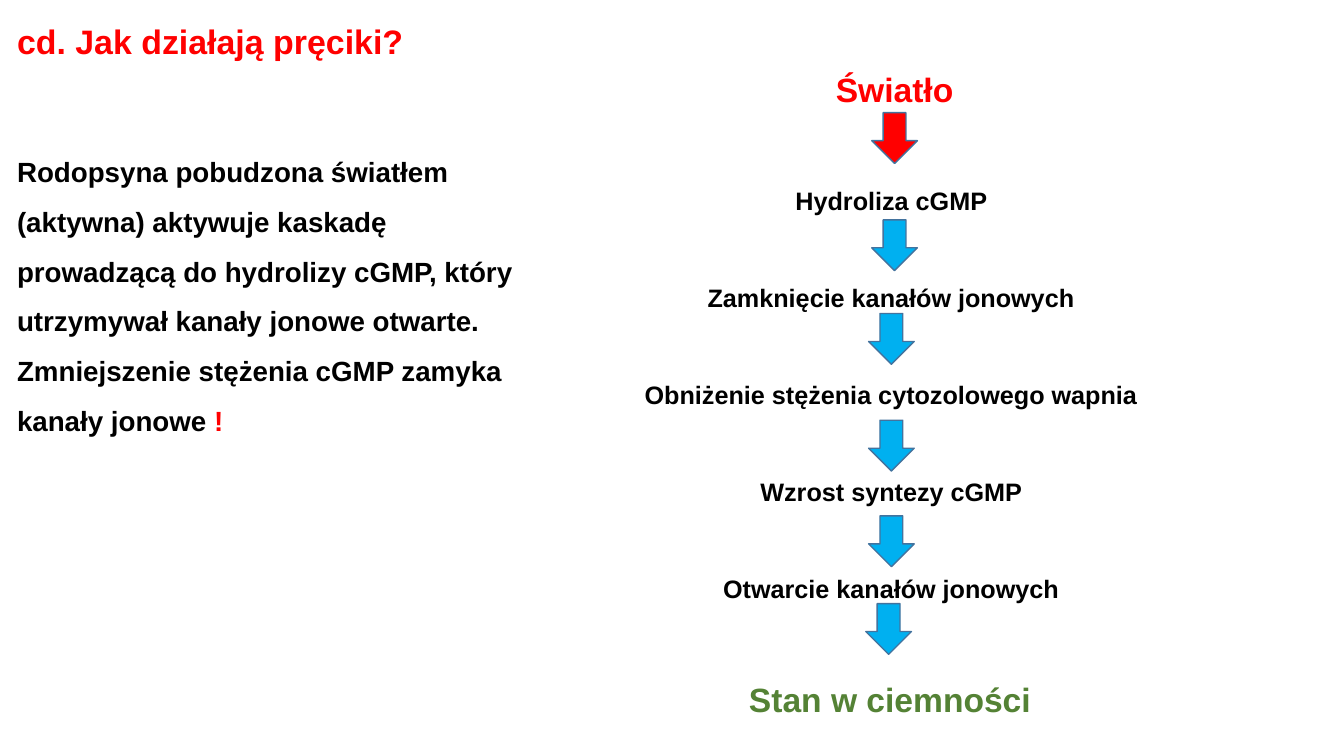
from dataclasses import dataclass

from pptx import Presentation
from pptx.dml.color import RGBColor
from pptx.enum.shapes import MSO_SHAPE as Shape
from pptx.enum.text import MSO_ANCHOR as Anchor, PP_ALIGN as Align
from pptx.slide import Slide
from pptx.text.text import TextFrame, _Paragraph as Paragraph
from pptx.util import Cm, Pt


@dataclass(frozen=True)
class Theme:
    font: str = "Arial"
    red: str = "FF0000"
    black: str = "000000"
    white: str = "FFFFFF"
    green: str = "548235"
    blue: str = "00B0F0"
    outline: str = "43739E"
    title_size: float = 24.2
    body_size: float = 19.8
    end_size: float = 24
    step_size: float = 18


@dataclass(frozen=True)
class Step:
    text: str
    size: float
    color: str
    gap: float  # points above the paragraph


@dataclass(frozen=True)
class Arrow:
    left: float
    top: float
    color: str


THEME = Theme()
STEP_GAP, END_GAP = 47.7, 54

MIDDLE_STEPS = [
    "Zamknięcie kanałów jonowych ",
    "Obniżenie stężenia cytozolowego wapnia ",
    "Wzrost syntezy cGMP ",
    "Otwarcie kanałów jonowych ",
]
STEPS = [
    Step("Światło", THEME.end_size, THEME.red, 0),
    Step("Hydroliza cGMP ", THEME.step_size, THEME.black, END_GAP),
    *(Step(text, THEME.step_size, THEME.black, STEP_GAP) for text in MIDDLE_STEPS),
    Step("Stan w ciemności ", THEME.end_size, THEME.green, END_GAP),
]
ARROWS = [
    Arrow(21.97, 2.84, THEME.red),
    Arrow(21.97, 5.54, THEME.blue),
    Arrow(21.89, 7.9, THEME.blue),
    Arrow(21.89, 10.59, THEME.blue),
    Arrow(21.89, 13, THEME.blue),
    Arrow(21.82, 15.21, THEME.blue),
]


def rgb(color: str) -> RGBColor:
    return RGBColor.from_string(color)


def add_span(para: Paragraph, text: str, size: float, color: str) -> None:
    span = para.add_run()
    span.text = text
    span.font.name = THEME.font
    span.font.size = Pt(size)
    span.font.bold = True
    span.font.color.rgb = rgb(color)


def prepare(frame: TextFrame) -> None:
    frame.word_wrap = True
    frame.vertical_anchor = Anchor.TOP


def add_explanation(page: Slide) -> None:
    box = page.shapes.add_textbox(Cm(0.18), Cm(0.64), Cm(13.06), Cm(10.57))
    frame = box.text_frame
    prepare(frame)

    title = frame.paragraphs[0]
    title.line_spacing = Pt(22)
    add_span(title, "cd. Jak działają pręciki?", THEME.title_size, THEME.red)

    body = frame.add_paragraph()
    body.space_before = Pt(55)
    body.line_spacing = Pt(35.6)
    add_span(
        body,
        "Rodopsyna pobudzona światłem (aktywna) aktywuje kaskadę prowadzącą "
        "do hydrolizy cGMP, który utrzymywał kanały jonowe otwarte. "
        "Zmniejszenie stężenia cGMP zamyka kanały jonowe ",
        THEME.body_size,
        THEME.black,
    )
    add_span(body, "!", THEME.body_size, THEME.red)


def add_cascade(page: Slide, steps: list[Step]) -> None:
    box = page.shapes.add_shape(
        Shape.RECTANGLE, Cm(14.05), Cm(0.76), Cm(16.99), Cm(17.32)
    )
    box.shadow.inherit = False
    box.fill.solid()
    box.fill.fore_color.rgb = rgb(THEME.white)
    box.line.fill.background()
    frame = box.text_frame
    prepare(frame)
    frame.margin_top = Cm(0.98)
    for index, step in enumerate(steps):
        para = frame.add_paragraph() if index else frame.paragraphs[0]
        para.alignment = Align.CENTER
        if step.gap:
            para.space_before = Pt(step.gap)
        add_span(para, step.text, step.size, step.color)


def add_arrow(page: Slide, arrow: Arrow) -> None:
    shape = page.shapes.add_shape(
        Shape.DOWN_ARROW, Cm(arrow.left), Cm(arrow.top), Cm(1.15), Cm(1.28)
    )
    shape.shadow.inherit = False
    shape.fill.solid()
    shape.fill.fore_color.rgb = rgb(arrow.color)
    shape.line.color.rgb = rgb(THEME.outline)
    shape.line.width = Pt(1)


def main() -> None:
    deck = Presentation()
    deck.slide_width, deck.slide_height = Cm(33.87), Cm(19.05)
    page = deck.slides.add_slide(deck.slide_layouts[6])

    # Title and explanation on the left
    add_explanation(page)

    # Cascade of steps on the right, with arrows between them
    add_cascade(page, STEPS)
    for arrow in ARROWS:
        add_arrow(page, arrow)

    deck.save("out.pptx")


if __name__ == "__main__":
    main()
